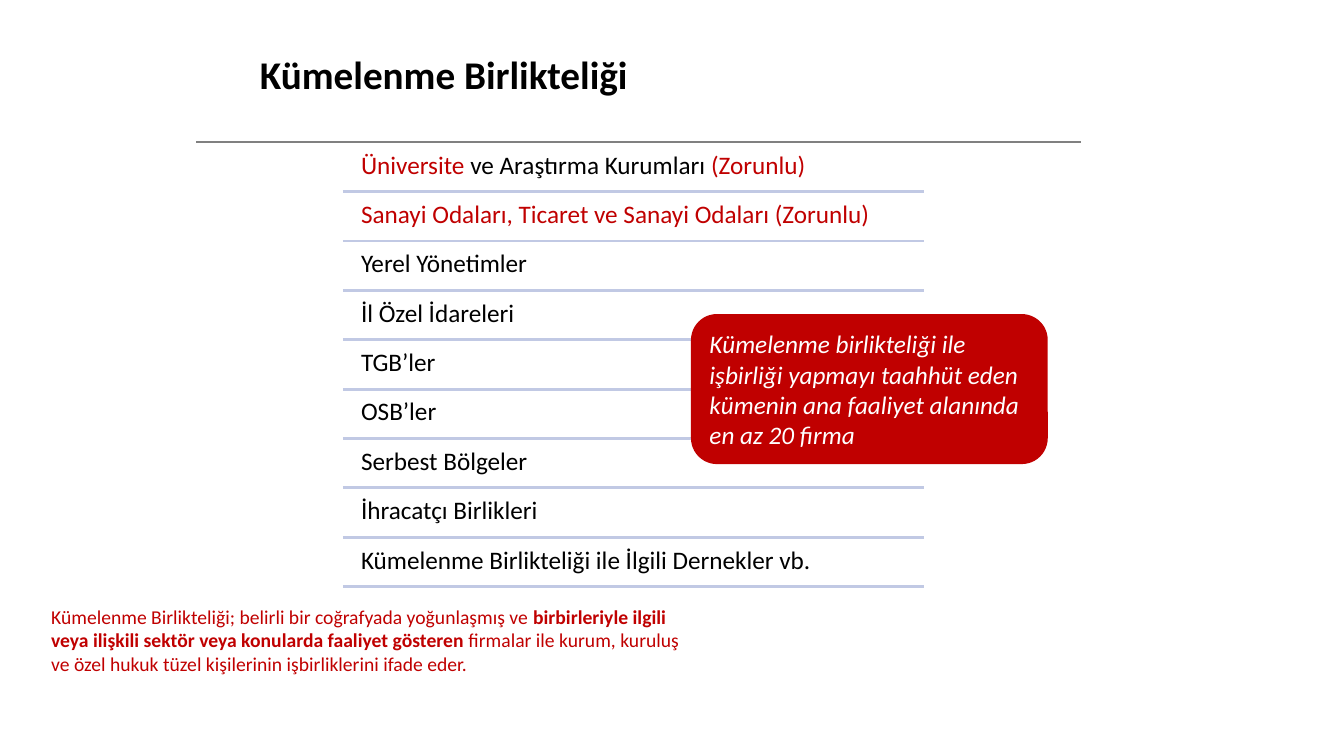
import lxml.etree
import pptx
import pptx.util
import pptx.dml.color
import pptx.enum.shapes
import pptx.enum.text
import pptx.oxml.ns
from pptx.util import Cm

# Content: each text is a list of (words, colour, bold) runs
RED, BLACK, WHITE, GREY, LAVENDER = "C00000", "000000", "FFFFFF", "808080", "C1C9E4"

TITLE = [("Kümelenme Birlikteliği", BLACK, True)]
MEMBERS = [
    [("Üniversite ", RED, False), ("ve Araştırma Kurumları ", BLACK, False),
     ("(Zorunlu)", RED, False)],
    [("Sanayi Odaları, Ticaret ve Sanayi Odaları (Zorunlu)", RED, False)],
    [("Yerel Yönetimler", BLACK, False)],
    [("İl Özel İdareleri", BLACK, False)],
    [("TGB’ler", BLACK, False)],
    [("OSB’ler", BLACK, False)],
    [("Serbest Bölgeler", BLACK, False)],
    [("İhracatçı Birlikleri", BLACK, False)],
    [("Kümelenme Birlikteliği ile İlgili Dernekler vb.", BLACK, False)],
]
CALLOUT = [("Kümelenme birlikteliği ile işbirliği yapmayı taahhüt eden "
            "kümenin ana faaliyet alanında en az 20 firma", WHITE, False)]
DEFINITION = [
    ("Kümelenme Birlikteliği; belirli bir coğrafyada yoğunlaşmış ve ", RED, False),
    ("birbirleriyle ilgili veya ilişkili sektör veya konularda faaliyet gösteren", RED, True),
    (" firmalar ile kurum, kuruluş ve özel hukuk tüzel kişilerinin "
     "işbirliklerini ifade eder.", RED, False),
]

# Layout in centimetres
HEADER_LEFT, HEADER_RIGHT, HEADER_Y = 4.95, 27.25, 3.58
RULE_LEFT, RULE_RIGHT = 8.64, 23.29
FIRST_RULE, LAST_RULE = 4.83, 14.78
MEMBER_LEFT, MEMBER_TOP, MEMBER_HEIGHT, MEMBER_INSET = 8.92, 3.66, 1.19, 0.18
pitch = (LAST_RULE - FIRST_RULE) / (len(MEMBERS) - 1)

presentation = pptx.Presentation()
presentation.slide_width, presentation.slide_height = Cm(33.87), Cm(19.05)
slide = presentation.slides.add_slide(presentation.slide_layouts[6])


def colour(value):
    return pptx.dml.color.RGBColor.from_string(value)


def write(frame, runs, size, italic=False):
    frame.word_wrap = True
    paragraph = frame.paragraphs[0]
    paragraph.alignment = pptx.enum.text.PP_ALIGN.LEFT
    paragraph.font.name = "Calibri"
    paragraph.font.size = pptx.util.Pt(size)
    paragraph.font.italic = italic
    for words, ink, bold in runs:
        run = paragraph.add_run()
        run.text = words
        run.font.color.rgb = colour(ink)
        run.font.bold = bold
    return paragraph


def add_text(left, top, width, height, runs, size):
    box = slide.shapes.add_textbox(Cm(left), Cm(top), Cm(width), Cm(height))
    return box.text_frame, write(box.text_frame, runs, size)


def add_rule(left, right, y, ink):
    rule = slide.shapes.add_connector(
        pptx.enum.shapes.MSO_CONNECTOR.STRAIGHT, Cm(left), Cm(y), Cm(right), Cm(y))
    rule.line.color.rgb = colour(ink)
    rule.line.width = pptx.util.Pt(2)
    lxml.etree.SubElement(rule.element.spPr, pptx.oxml.ns.qn("a:effectLst"))


# Header rule and list of members
add_rule(HEADER_LEFT, HEADER_RIGHT, HEADER_Y, GREY)
for row, member in enumerate(MEMBERS):
    frame, paragraph = add_text(MEMBER_LEFT, MEMBER_TOP + row * pitch,
                                RULE_RIGHT - MEMBER_LEFT, MEMBER_HEIGHT, member, 18)
    frame.margin_left = frame.margin_right = Cm(MEMBER_INSET)
    frame.margin_top = frame.margin_bottom = Cm(MEMBER_INSET)
    paragraph.line_spacing = 0.9
    add_rule(RULE_LEFT, RULE_RIGHT, FIRST_RULE + row * pitch, LAVENDER)

# Callout
callout = slide.shapes.add_shape(pptx.enum.shapes.MSO_SHAPE.ROUNDED_RECTANGLE,
                                 Cm(17.45), Cm(7.95), Cm(8.92), Cm(3.71))
callout.shadow.inherit = False
callout.fill.solid()
callout.fill.fore_color.rgb = colour(RED)
callout.line.color.rgb = colour(RED)
callout.line.width = pptx.util.Pt(2)
callout.text_frame.vertical_anchor = pptx.enum.text.MSO_ANCHOR.MIDDLE
write(callout.text_frame, CALLOUT, 18, italic=True)

# Definition and title
add_text(1.04, 15.11, 16.38, 2.06, DEFINITION, 14)
add_text(6.3, 1.14, 22.3, 1.45, TITLE, 28)

presentation.save("out.pptx")
